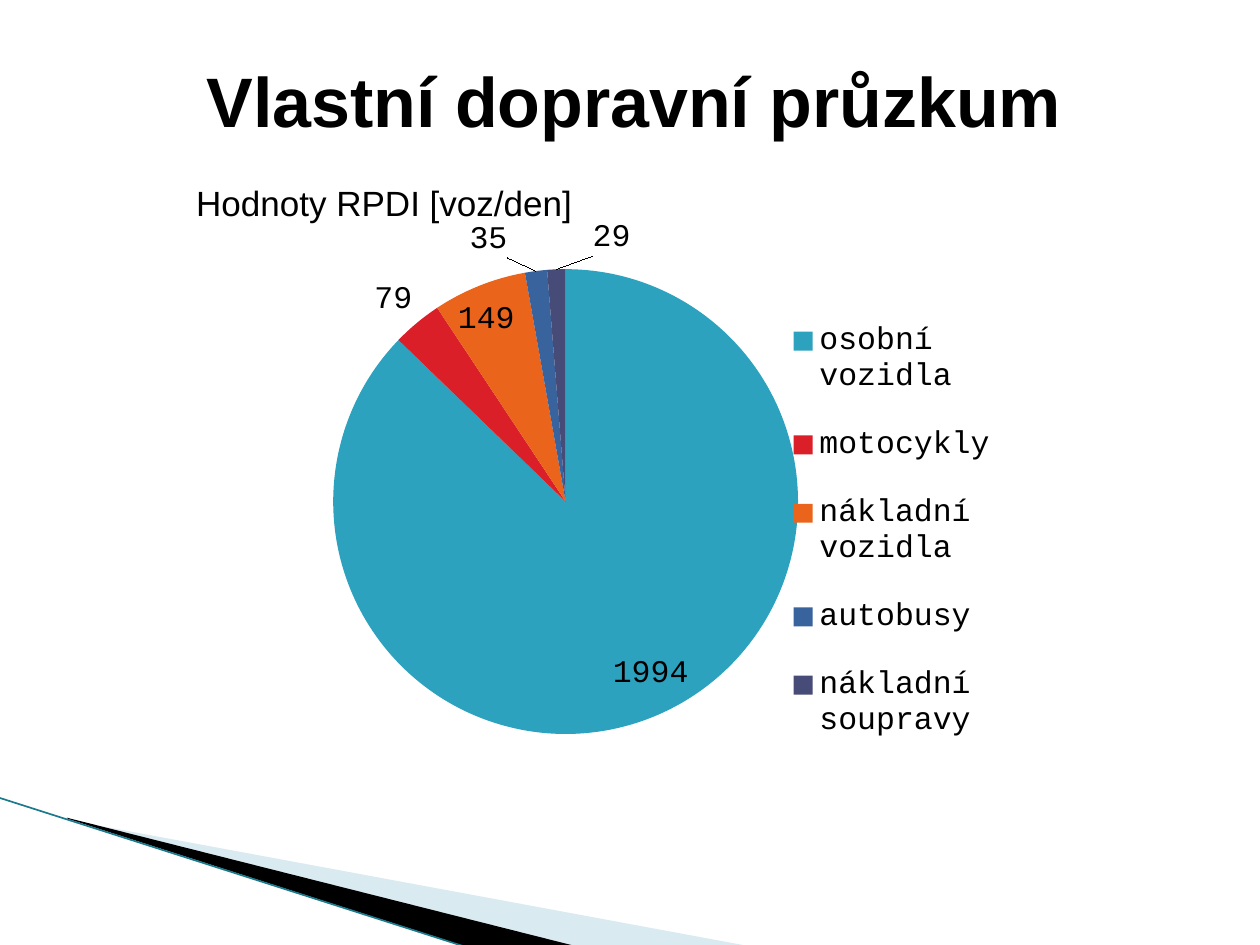
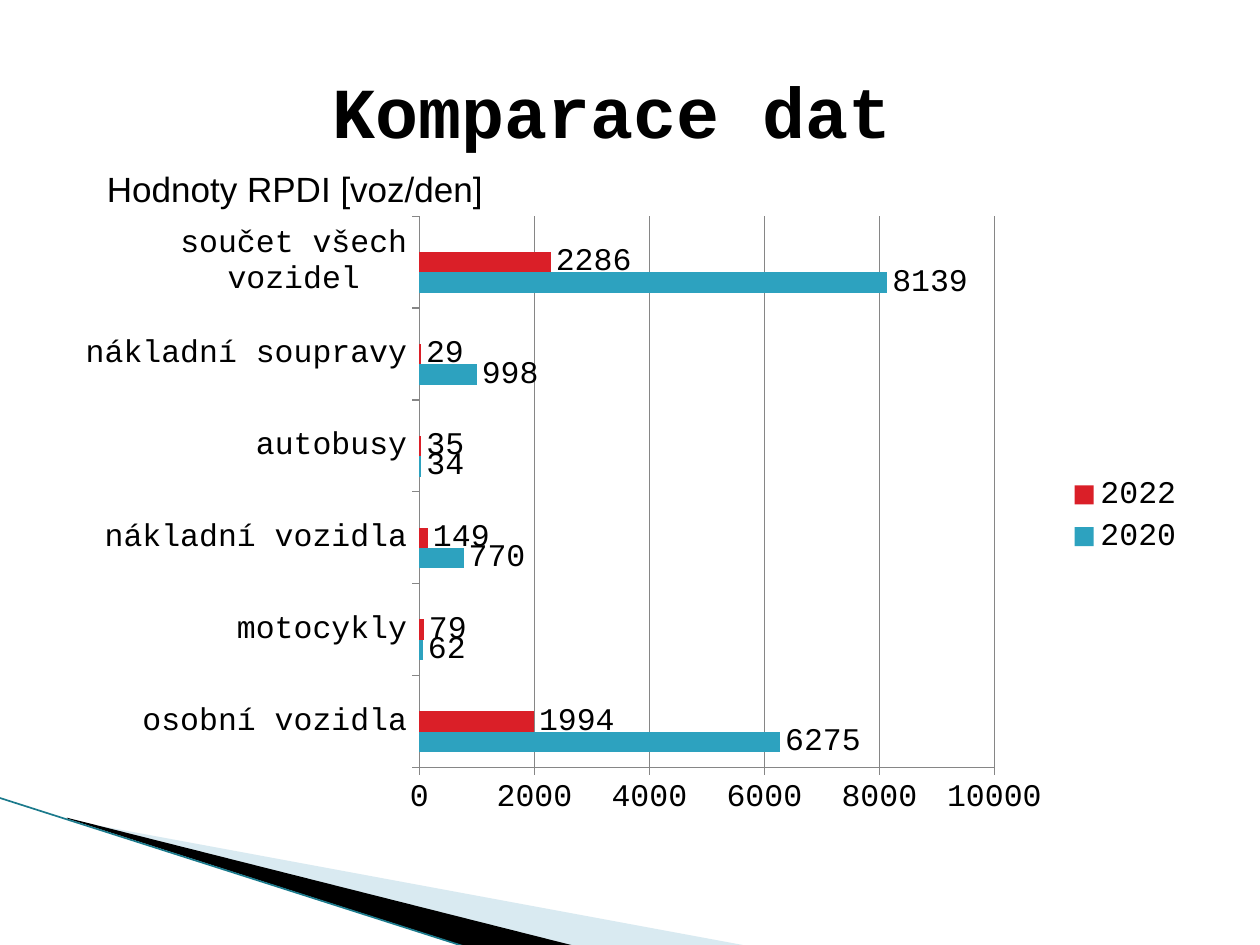
"""Build two slides on traffic survey results: a pie chart and a bar chart."""
from lxml import etree
from pptx import Presentation
from pptx.chart.data import CategoryChartData
from pptx.dml.color import RGBColor
from pptx.enum import chart as ch, shapes, text
from pptx.oxml import ns
from pptx.util import Pt

COLOURS = {"text": "000000", "teal": "2DA2BF", "red": "DA1F28", "orange": "EB641B",
           "blue": "39639D", "violet": "474B78", "grey": "868686",
           "pale": "A0CBDC", "edge": "1B7A8C"}
SANS, MONO = "Arial", "Courier New"
UNIT = "Hodnoty RPDI [voz/den]"
VEHICLES = ["osobní vozidla", "motocykly", "nákladní vozidla", "autobusy", "nákladní soupravy"]
SURVEY = [1994, 79, 149, 35, 29]
CENSUS = [6275, 62, 770, 34, 998]

PIE = {
    "title": ("Vlastní dopravní průzkum", SANS, 40, 9.5),
    "unit_at": (105, 100),
    "chart_at": (178.5, 122.5, 396.5, 335),
    "kind": ch.XL_CHART_TYPE.PIE,
    "categories": VEHICLES,
    "series": [("Series 1", SURVEY)],
}
BARS = {
    "title": ("Komparace dat ", MONO, 41, 15),
    "unit_at": (54, 92),
    "chart_at": (36, 116.5, 648, 356.5),
    "kind": ch.XL_CHART_TYPE.BAR_CLUSTERED,
    "categories": VEHICLES + ["součet všech vozidel"],
    "series": [("2020", CENSUS + [8139]), ("2022", SURVEY + [2286]),
               ("Sloupec1", [None] * 6)],
}
SLICE_COLOURS = ["teal", "red", "orange", "blue", "violet"]
BAR_COLOURS = ["teal", "red", "orange"]
LABEL_SHIFTS = {3: (-0.04, -0.01), 4: (0.08, -0.01)}

WEDGES = [("pale", 40, [(39.6, 468.7), (428.4, 540.7), (328.3, 540.7), (39.6, 468)]),
          ("text", 100, [(38.2, 467.3), (329, 540.7), (267.8, 541.4), (38.9, 468)])]
EDGE = (-0.7, 455.8, 267.1, 541.4)


def rgb(name):
    return RGBColor.from_string(COLOURS[name])


def fill(part, name):
    part.format.fill.solid()
    part.format.fill.fore_color.rgb = rgb(name)


def sub(parent, tag, **attributes):
    return etree.SubElement(parent, ns.qn(tag), attributes)


def manual_layout(**values):
    layout = etree.Element(ns.qn("c:layout"))
    manual = sub(layout, "c:manualLayout")
    for key, value in values.items():
        sub(manual, f"c:{key}", val=str(value))
    return layout


def add_corner(slide, layout):
    """Draw the corner wedges and keep them on the shared layout."""
    parts = []
    for name, opacity, points in WEDGES:
        start, *rest = [(Pt(x), Pt(y)) for x, y in points]
        builder = slide.shapes.build_freeform(*start)
        builder.add_line_segments(rest)
        wedge = builder.convert_to_shape()
        wedge.shadow.inherit = False
        wedge.fill.solid()
        wedge.fill.fore_color.rgb = rgb(name)
        wedge.line.fill.background()
        if opacity < 100:
            colour = wedge._element.spPr.find(".//" + ns.qn("a:srgbClr"))
            sub(colour, "a:alpha", val=str(opacity * 1000))
        parts.append(wedge)
    edge = slide.shapes.add_connector(shapes.MSO_CONNECTOR.STRAIGHT, *map(Pt, EDGE))
    edge.line.color.rgb = rgb("edge")
    edge.line.width = Pt(0.95)
    sub(edge._element.spPr, "a:effectLst")
    for position, part in enumerate(parts + [edge], start=2):
        layout.shapes.element.insert(position, part._element)


def write(paragraph, words, font, size, bold=False):
    run = paragraph.add_run()
    run.text = words
    run.font.name, run.font.size, run.font.bold = font, Pt(size), bold
    run.font.color.rgb = rgb("text")


def add_title(slide, words, font, size, top):
    title = slide.shapes.title
    title.left, title.top, title.width, title.height = map(Pt, (88, top, 548.5, 95))
    frame = title.text_frame
    frame.vertical_anchor = text.MSO_ANCHOR.MIDDLE
    frame.paragraphs[0].alignment = text.PP_ALIGN.CENTER
    write(frame.paragraphs[0], words, font, size, True)


def add_unit(slide, left, top):
    frame = slide.shapes.add_textbox(Pt(left), Pt(top), Pt(231), Pt(31.5)).text_frame
    frame.word_wrap = False
    frame.auto_size = text.MSO_AUTO_SIZE.SHAPE_TO_FIT_TEXT
    write(frame.paragraphs[0], UNIT, SANS, 20)


def add_chart(slide, content):
    data = CategoryChartData()
    data.categories = content["categories"]
    for name, values in content["series"]:
        data.add_series(name, values)
    chart = slide.shapes.add_chart(
        content["kind"], *map(Pt, content["chart_at"]), data).chart
    chart.has_title = False
    chart.font.name, chart.font.size = MONO, Pt(18)
    chart.font.color.rgb = rgb("text")
    chart.has_legend = True
    chart.legend.position = ch.XL_LEGEND_POSITION.RIGHT
    chart.legend.include_in_layout = False
    return chart


def show_values(series, position):
    labels = series.data_labels
    labels.show_value = True
    labels.position = position


def style_pie(chart):
    chart.plots[0].vary_by_categories = True
    series = chart.plots[0].series[0]
    show_values(series, ch.XL_LABEL_POSITION.BEST_FIT)
    for index, name in enumerate(SLICE_COLOURS):
        fill(series.points[index], name)
    for index, (x, y) in LABEL_SHIFTS.items():
        series.points[index].data_label.position = ch.XL_LABEL_POSITION.BEST_FIT
        label = series._element.find(f".//{ns.qn('c:dLbl')}[{ns.qn('c:idx')}][{index - 2}]")
        label.insert(1, manual_layout(x=x, y=y))
    plot_area = chart._chartSpace.chart.plotArea
    for old in plot_area.findall(ns.qn("c:layout")):
        plot_area.remove(old)
    plot_area.insert(0, manual_layout(layoutTarget="inner", xMode="edge", yMode="edge",
                                      x=0.03, y=0.04, w=0.67, h=0.9))
    legend = chart.legend._element
    for old in legend.findall(ns.qn("c:layout")):
        legend.remove(old)
    legend.find(ns.qn("c:legendPos")).addnext(
        manual_layout(xMode="edge", yMode="edge", x=0.68, y=0.13, w=0.31, h=0.82))


def style_bars(chart):
    plot = chart.plots[0]
    plot.vary_by_categories = False
    plot.gap_width = 150
    for series, name in zip(plot.series, BAR_COLOURS):
        fill(series, name)
    for series in list(plot.series)[:2]:
        show_values(series, ch.XL_LABEL_POSITION.OUTSIDE_END)
    for axis in (chart.category_axis, chart.value_axis):
        axis.major_tick_mark = ch.XL_TICK_MARK.OUTSIDE
        axis.format.line.color.rgb = rgb("grey")
    chart.value_axis.has_major_gridlines = True
    chart.value_axis.major_gridlines.format.line.color.rgb = rgb("grey")
    entry = etree.Element(ns.qn("c:legendEntry"))
    sub(entry, "c:idx", val="0")
    sub(entry, "c:delete", val="1")
    chart.legend._element.find(ns.qn("c:legendPos")).addnext(entry)


def main():
    deck = Presentation()
    deck.slide_width, deck.slide_height = Pt(720), Pt(540)
    layout = deck.slide_layouts.get_by_name("Title Only")
    for content, style in ((PIE, style_pie), (BARS, style_bars)):
        slide = deck.slides.add_slide(layout)
        if content is PIE:
            add_corner(slide, layout)
        add_title(slide, *content["title"])
        style(add_chart(slide, content))
        add_unit(slide, *content["unit_at"])
    deck.save("out.pptx")


if __name__ == "__main__":
    main()
